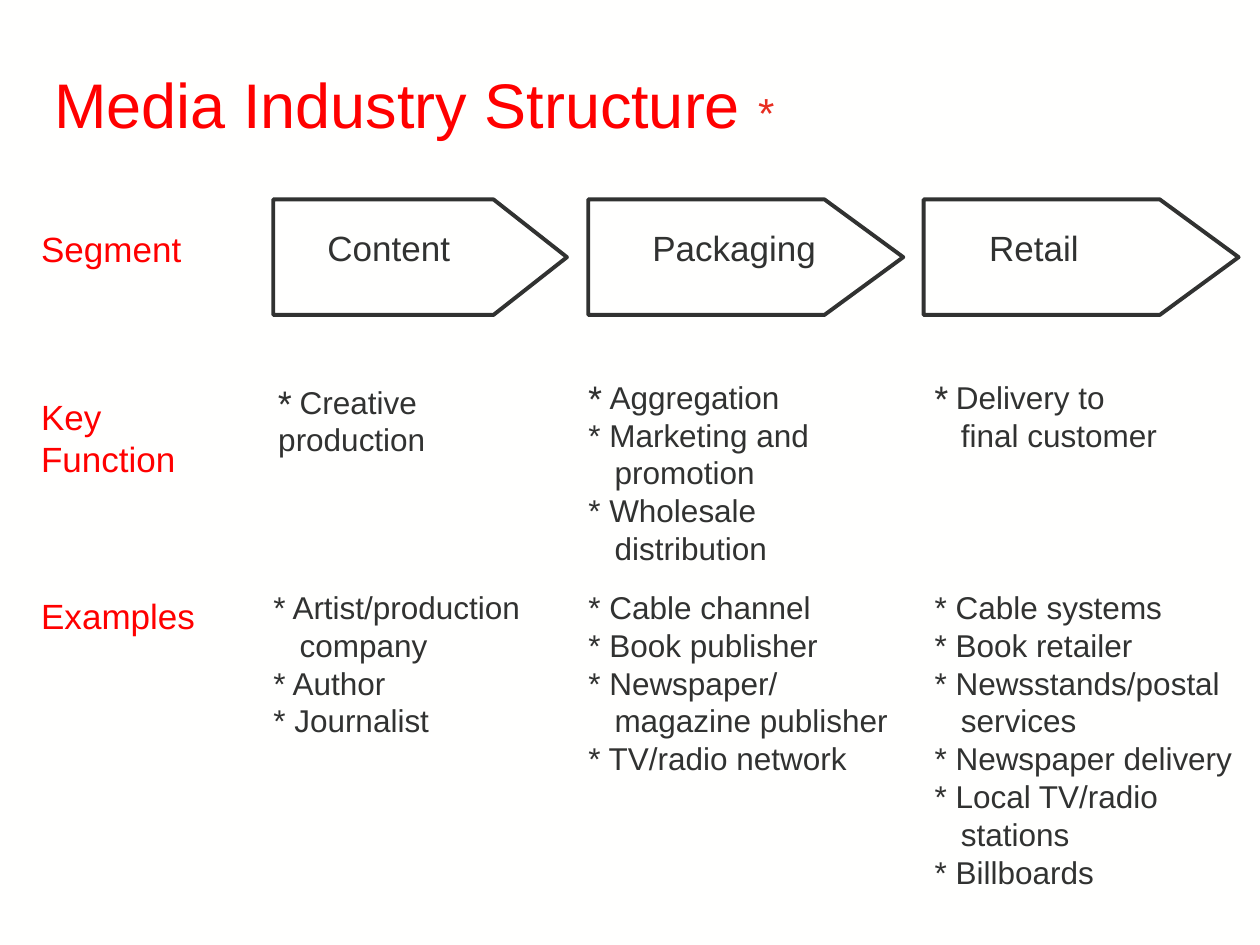
import dataclasses

import pptx
import pptx.dml.color
import pptx.enum.shapes
import pptx.enum.text
import pptx.util
from pptx.util import Cm, Pt

RED = "FF0000"
STAR_RED = "E82E21"
DARK = "313231"
PAPER = "FFFFFE"
HANGING = Cm(0.53)


@dataclasses.dataclass
class Segment:
    name: str
    arrow_left: float
    arrow_width: float
    point: float
    name_left: float
    name_width: float


@dataclasses.dataclass
class Note:
    """A block of text; a line break inside an item is written as a newline."""
    items: list[str]
    left: float
    top: float
    width: float
    height: float
    marker_font: str = "Arial"
    hanging: bool = True


SEGMENTS = [
    Segment("Content", 5.51, 5.92, 0.636, 6.35, 3.0),
    Segment("Packaging", 11.86, 6.35, 0.682, 12.9, 3.84),
    Segment("Retail", 18.62, 6.35, 0.682, 19.69, 2.34),
]

LABELS = [
    Note(["Segment"], 0.58, 4.47, 3.35, 1.12),
    Note(["Key", "Function"], 0.58, 7.85, 3.25, 1.96),
    Note(["Examples"], 0.58, 11.86, 3.63, 1.12),
]

FUNCTIONS_TOP, EXAMPLES_TOP = 7.49, 11.73
NOTES = [
    Note(["* Creative\nproduction"], 5.36, 7.59, 6.3, 1.78, "Roboto", False),
    Note(["* Aggregation", "* Marketing and\npromotion",
          "* Wholesale\ndistribution"],
         11.61, FUNCTIONS_TOP, 5.05, 4.06, "Roboto"),
    Note(["* Delivery to\nfinal customer"],
         18.59, FUNCTIONS_TOP, 5.05, 2.57, "Roboto"),
    Note(["* Artist/production\ncompany", "* Author", "* Journalist"],
         5.26, EXAMPLES_TOP, 5.54, 3.33),
    Note(["* Cable channel", "* Book publisher",
          "* Newspaper/\nmagazine publisher", "* TV/radio network"],
         11.61, EXAMPLES_TOP, 6.6, 4.88),
    Note(["* Cable systems", "* Book retailer",
          "* Newsstands/postal\nservices", "* Newspaper delivery",
          "* Local TV/radio\nstations", "* Billboards"],
         18.59, EXAMPLES_TOP, 6.55, 6.35),
]


def rgb(value: str) -> pptx.dml.color.RGBColor:
    return pptx.dml.color.RGBColor.from_string(value)


def add_text(para, text: str, *, size: float, color: str,
             font: str = "Arial") -> None:
    for index, line in enumerate(text.split("\n")):
        if index:
            para.add_line_break()
        span = para.add_run()
        span.text = line
        span.font.name = font
        span.font.size = Pt(size)
        span.font.color.rgb = rgb(color)


def add_box(page, left: float, top: float, width: float, height: float):
    box = page.shapes.add_textbox(Cm(left), Cm(top), Cm(width), Cm(height))
    frame = box.text_frame
    frame.word_wrap = False
    frame.auto_size = pptx.enum.text.MSO_AUTO_SIZE.SHAPE_TO_FIT_TEXT
    return frame


def add_paragraphs(frame, count: int) -> list:
    return [frame.paragraphs[0]] + [frame.add_paragraph()
                                    for _ in range(count - 1)]


def add_title(page) -> None:
    title = page.shapes.title
    title.left, title.top = Cm(0.84), Cm(1.07)
    title.width, title.height = Cm(22.86), Cm(3.18)
    frame = title.text_frame
    frame.vertical_anchor = pptx.enum.text.MSO_ANCHOR.TOP
    frame.margin_top = Cm(0.25)
    para = frame.paragraphs[0]
    para.alignment = pptx.enum.text.PP_ALIGN.LEFT
    add_text(para, "Media Industry Structure ", size=36, color=RED)
    add_text(para, "*", size=24, color=STAR_RED)


def add_segment(page, segment: Segment) -> None:
    arrow = page.shapes.add_shape(
        pptx.enum.shapes.MSO_SHAPE.PENTAGON, Cm(segment.arrow_left), Cm(4.02),
        Cm(segment.arrow_width), Cm(2.33))
    arrow.adjustments[0] = segment.point
    arrow.shadow.inherit = False
    arrow.fill.background()
    arrow.line.color.rgb = rgb(DARK)
    arrow.line.width = Pt(2.25)
    frame = add_box(page, segment.name_left, 4.45, segment.name_width, 1.12)
    add_text(frame.paragraphs[0], segment.name, size=20, color=DARK)


def add_label(page, label: Note) -> None:
    frame = add_box(page, label.left, label.top, label.width, label.height)
    for para, item in zip(add_paragraphs(frame, len(label.items)), label.items):
        add_text(para, item, size=20, color=RED)


def add_note(page, note: Note) -> None:
    frame = add_box(page, note.left, note.top, note.width, note.height)
    paras = add_paragraphs(frame, len(note.items))
    for index, (para, item) in enumerate(zip(paras, note.items)):
        if note.hanging:
            properties = para._p.get_or_add_pPr()
            properties.set("marL", str(HANGING))
            properties.set("indent", str(-HANGING))
        marker_font = "Arial" if index else note.marker_font
        add_text(para, item[:2], size=18, color=DARK, font=marker_font)
        add_text(para, item[2:], size=18, color=DARK)


def main() -> None:
    deck = pptx.Presentation()
    deck.slide_width, deck.slide_height = Cm(25.4), Cm(19.05)
    page = deck.slides.add_slide(deck.slide_layouts.get_by_name("Title Only"))
    page.background.fill.solid()
    page.background.fill.fore_color.rgb = rgb(PAPER)
    add_title(page)
    for segment in SEGMENTS:
        add_segment(page, segment)
    for label in LABELS:
        add_label(page, label)
    for note in NOTES:
        add_note(page, note)
    deck.save("out.pptx")


if __name__ == "__main__":
    main()
